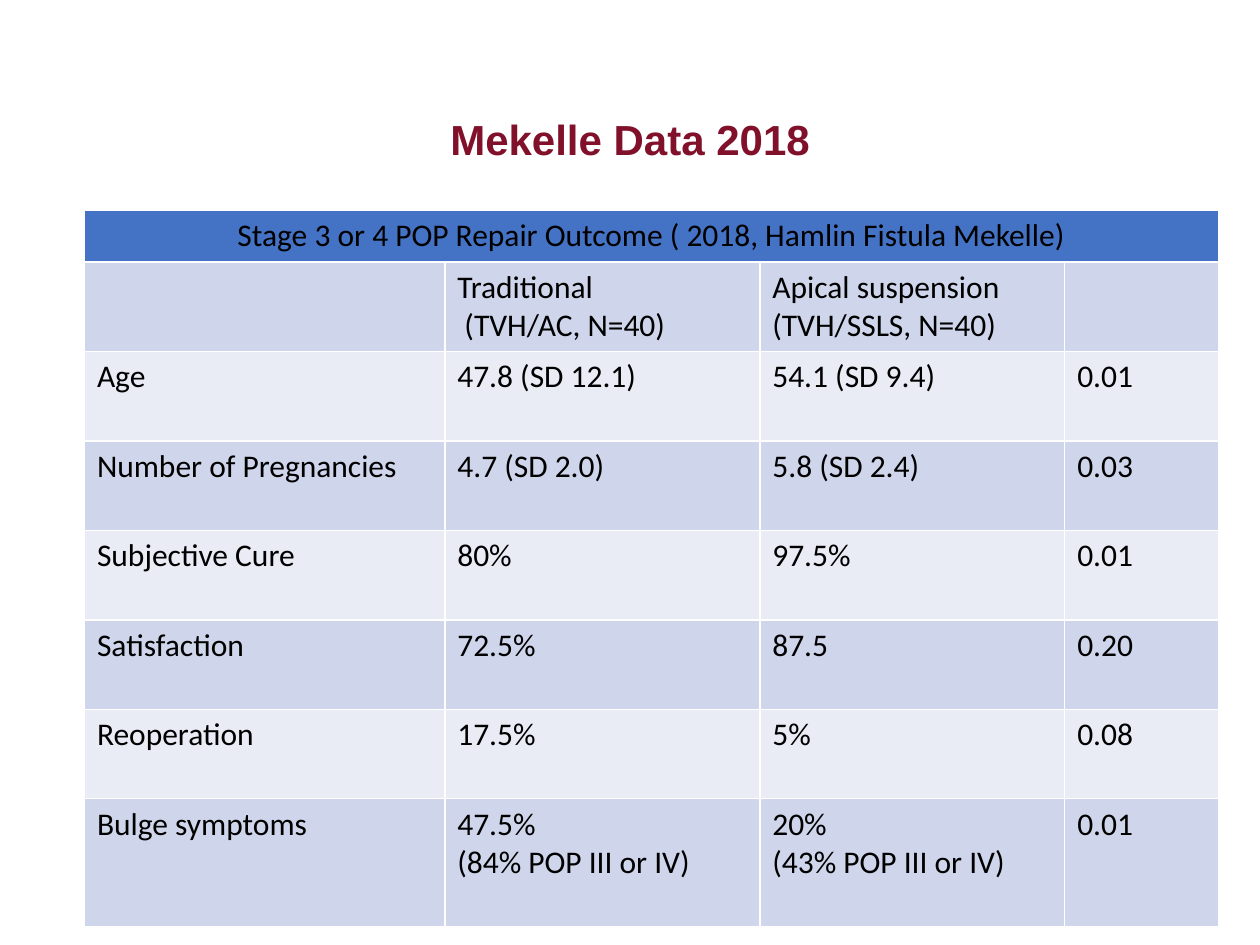
from pptx import Presentation
from pptx import util as u
from pptx.dml.color import RGBColor
from pptx.enum import text

TITLE = "Mekelle Data 2018"
HEADING = "Stage 3 or 4 POP Repair Outcome ( 2018, Hamlin Fistula Mekelle)"
OUTCOMES = [
    ("", "Traditional\n (TVH/AC, N=40)", "Apical suspension\n(TVH/SSLS, N=40)", ""),
    ("Age", "47.8 (SD 12.1)", "54.1 (SD 9.4)", "0.01"),
    ("Number of Pregnancies", "4.7 (SD 2.0)", "5.8 (SD 2.4)", "0.03"),
    ("Subjective Cure", "80%", "97.5%", "0.01"),
    ("Satisfaction", "72.5%", "87.5", "0.20"),
    ("Reoperation", "17.5%", "5%", "0.08"),
    ("Bulge symptoms", "47.5%\n(84% POP III or IV)", "20%\n(43% POP III or IV)", "0.01"),
]
THEME = {
    "title": {"name": "Arial", "size": u.Pt(24), "bold": True, "color": "81112B"},
    "body": {"name": "Calibri", "size": u.Pt(18), "bold": False, "color": "000000"},
    "heading_fill": "4472C4",
    "bands": ("CFD5EA", "E9EBF5"),
}
SLIDE_W, SLIDE_H = 10, 7.5
TITLE_BOX = (0.69, 0.4, 8.62, 1.45)
TABLE_LEFT, TABLE_TOP = 0.67, 1.67
COLUMNS = (2.86, 2.5, 2.42, 1.22)
HEADING_H, ROW_H, LAST_H = 0.41, 0.71, 1.02


def write(frame, words, style, align=text.PP_ALIGN.LEFT):
    frame.text = words
    for paragraph in frame.paragraphs:
        paragraph.alignment = align
        for part in [paragraph, *paragraph.runs]:
            for key, value in THEME[style].items():
                if key == "color":
                    part.font.color.rgb = RGBColor.from_string(value)
                else:
                    setattr(part.font, key, value)


def paint(cell, color):
    cell.fill.solid()
    cell.fill.fore_color.rgb = RGBColor.from_string(color)


def add_title(slide):
    frame = slide.shapes.add_textbox(*map(u.Inches, TITLE_BOX)).text_frame
    frame.word_wrap = True
    frame.vertical_anchor = text.MSO_ANCHOR.MIDDLE
    write(frame, TITLE, "title", text.PP_ALIGN.CENTER)
    frame.paragraphs[0].line_spacing = 0.9


def add_outcomes(slide):
    heights = [HEADING_H] + [ROW_H] * (len(OUTCOMES) - 1) + [LAST_H]
    extent = (TABLE_LEFT, TABLE_TOP, sum(COLUMNS), sum(heights))
    table = slide.shapes.add_table(
        len(heights), len(COLUMNS), *map(u.Inches, extent)).table
    for column, width in zip(table.columns, COLUMNS):
        column.width = u.Inches(width)
    for row, height in zip(table.rows, heights):
        row.height = u.Inches(height)

    heading = table.cell(0, 0)
    heading.merge(table.cell(0, len(COLUMNS) - 1))
    paint(heading, THEME["heading_fill"])
    write(heading.text_frame, HEADING, "body", text.PP_ALIGN.CENTER)

    for r, outcome in enumerate(OUTCOMES):
        for c, words in enumerate(outcome):
            cell = table.cell(r + 1, c)
            paint(cell, THEME["bands"][r % 2])
            write(cell.text_frame, words, "body")


def main():
    deck = Presentation()
    deck.slide_width, deck.slide_height = u.Inches(SLIDE_W), u.Inches(SLIDE_H)
    slide = deck.slides.add_slide(deck.slide_layouts[6])
    add_title(slide)
    add_outcomes(slide)
    deck.save("out.pptx")


if __name__ == "__main__":
    main()
